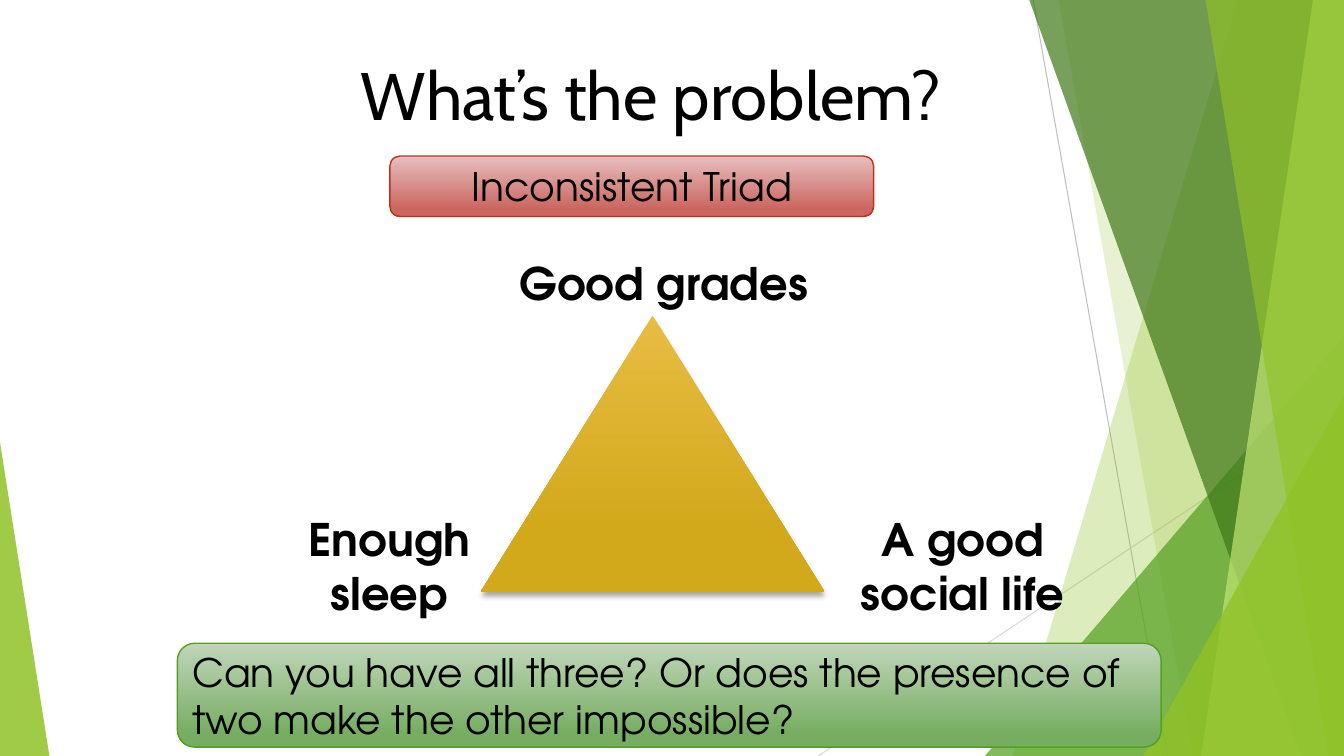
"""Build the inconsistent triad slide with its green faceted backdrop."""
from dataclasses import dataclass
from typing import Any

from lxml.etree import SubElement
from pptx import Presentation
from pptx.dml.color import RGBColor
from pptx.enum.shapes import MSO_CONNECTOR, MSO_SHAPE
from pptx.enum.text import MSO_ANCHOR, MSO_AUTO_SIZE, PP_ALIGN
from pptx.oxml.ns import qn
from pptx.util import Pt

WIDTH, HEIGHT = 960, 540
Box = tuple[float, float, float, float]


@dataclass(frozen=True)
class Theme:
    head: str = "Cabin"
    body: str = "TeX Gyre Adventor"
    ink: str = "000000"
    lime: str = "90C226"
    green: str = "54A021"
    moss: str = "3F7819"
    pale: str = "C0E474"
    red: str = "C42F1A"
    rays: tuple[str, str] = ("BFBFBF", "D9D9D9")
    rose: tuple[str, str] = ("E6BFBE", "CB6560")
    sage: tuple[str, str] = ("C0D6B9", "76AD61")
    gold: tuple[str, str] = ("E7BC43", "D2A91B")
    title: int = 48
    label: int = 32
    note: int = 28


@dataclass(frozen=True)
class Ray:
    start: tuple[float, float]
    end: tuple[float, float]
    color: str


@dataclass(frozen=True)
class Wedge:
    top: float
    foot: float
    color: str
    alpha: int


@dataclass(frozen=True)
class Corner:
    box: Box
    apex: int
    color: str
    alpha: int


@dataclass(frozen=True)
class Banner:
    box: Box
    text: str
    fade: tuple[str, str]
    edge: str
    align: PP_ALIGN


@dataclass(frozen=True)
class Label:
    box: Box
    text: str


THEME = Theme()
RAYS = (
    Ray((738, 0), (834, HEIGHT), THEME.rays[0]),
    Ray((WIDTH, 290), (584.5, HEIGHT), THEME.rays[1]),
)
FACETS = (
    Wedge(884.2, 723, THEME.lime, 30),
    Wedge(756, 852, THEME.lime, 20),
    Corner((703.5, 240, 256.5, 300), 1, THEME.green, 72),
    Wedge(735, 929.5, THEME.moss, 70),
    Wedge(938, 858, THEME.pale, 70),
    Wedge(861, 949, THEME.lime, 65),
    Corner((816.5, 283, 143.5, 257), 1, THEME.lime, 80),
    Corner((0, 316, 35.3, 224), 0, THEME.lime, 85),
)
BANNERS = (
    Banner((278.5, 111.5, 345.6, 43.2), "Inconsistent Triad",
           THEME.rose, THEME.red, PP_ALIGN.CENTER),
    Banner((126.7, 459.5, 702.7, 74.2),
           "Can you have all three? Or does the presence of two make the other impossible?",
           THEME.sage, THEME.green, PP_ALIGN.LEFT),
)
LABELS = (
    Label((353.5, 179.3, 241.2, 46), "Good grades"),
    Label((181.4, 362.2, 193.7, 85), "Enough sleep"),
    Label((572.4, 362.2, 230.4, 85), "A good social life"),
)


def rgb(code: str) -> RGBColor:
    return RGBColor.from_string(code)


def apply(target: Any, values: dict[str, Any]) -> None:
    for name, value in values.items():
        setattr(target, name, value)


def place(box: Box) -> list[Pt]:
    return [Pt(value) for value in box]


def write(shape: Any, text: str, face: str, size: int, align: PP_ALIGN,
          anchor: MSO_ANCHOR, bold: bool = False) -> None:
    frame = shape.text_frame
    apply(frame, {"text": text, "word_wrap": True, "vertical_anchor": anchor})
    line = frame.paragraphs[0]
    line.alignment = align
    font = line.runs[0].font
    apply(font, {"name": face, "size": Pt(size), "bold": bold})
    font.color.rgb = rgb(THEME.ink)


def tint(shape: Any, color: str, alpha: int) -> None:
    shape.shadow.inherit = False
    shape.fill.solid()
    shape.fill.fore_color.rgb = rgb(color)
    shape.line.fill.background()
    node = shape.element.find(".//" + qn("a:srgbClr"))
    SubElement(node, qn("a:alpha"), val=str(alpha * 1000))


def fade(shape: Any, colors: tuple[str, str], end: float) -> None:
    shape.shadow.inherit = False
    shape.fill.gradient()
    shape.fill.gradient_angle = 270
    for stop, color, spot in zip(shape.fill.gradient_stops, colors, (0, end)):
        stop.color.rgb = rgb(color)
        stop.position = spot


def draw_ray(slide: Any, ray: Ray) -> None:
    line = slide.shapes.add_connector(
        MSO_CONNECTOR.STRAIGHT, *place(ray.start + ray.end))
    line.line.width = Pt(0.75)
    line.line.color.rgb = rgb(ray.color)
    SubElement(line.element.spPr, qn("a:effectLst"))


def draw_facet(slide: Any, facet: Wedge | Corner) -> None:
    if isinstance(facet, Wedge):
        path = slide.shapes.build_freeform(Pt(facet.top), Pt(-0.7))
        path.add_line_segments([
            (Pt(WIDTH), Pt(-0.7)), (Pt(WIDTH), Pt(HEIGHT)),
            (Pt(facet.foot), Pt(HEIGHT))])
        shape = path.convert_to_shape()
    else:
        shape = slide.shapes.add_shape(
            MSO_SHAPE.ISOSCELES_TRIANGLE, *place(facet.box))
        shape.adjustments[0] = facet.apex
    tint(shape, facet.color, facet.alpha)


def draw_banner(slide: Any, item: Banner) -> None:
    shape = slide.shapes.add_shape(
        MSO_SHAPE.ROUNDED_RECTANGLE, *place(item.box))
    fade(shape, item.fade, 0.88)
    shape.line.width = Pt(1)
    shape.line.color.rgb = rgb(item.edge)
    write(shape, item.text, THEME.body, THEME.note, item.align, MSO_ANCHOR.MIDDLE)


def draw_triad(slide: Any) -> None:
    shape = slide.shapes.add_shape(
        MSO_SHAPE.ISOSCELES_TRIANGLE, *place((343.4, 225.4, 245.5, 197.3)))
    fade(shape, THEME.gold, 0.78)
    shape.line.fill.background()
    glow = SubElement(
        shape.element.spPr.find(qn("a:effectLst")), qn("a:outerShdw"),
        blurRad=str(Pt(4)), dist=str(Pt(3)), dir="5400000", rotWithShape="0")
    color = SubElement(glow, qn("a:srgbClr"), val=THEME.ink)
    SubElement(color, qn("a:alpha"), val="35000")


def draw_label(slide: Any, item: Label) -> None:
    shape = slide.shapes.add_textbox(*place(item.box))
    write(shape, item.text, THEME.body, THEME.label, PP_ALIGN.CENTER,
          MSO_ANCHOR.TOP, True)
    shape.text_frame.auto_size = MSO_AUTO_SIZE.SHAPE_TO_FIT_TEXT


def draw_title(slide: Any) -> None:
    title = slide.shapes.title
    box = place((126.7, 34.6, 676.8, 103.7))
    apply(title, dict(zip(("left", "top", "width", "height"), box)))
    write(title, "What’s the problem?", THEME.head, THEME.title,
          PP_ALIGN.CENTER, MSO_ANCHOR.TOP)
    title.element.getparent().append(title.element)


def main() -> None:
    deck = Presentation()
    apply(deck, {"slide_width": Pt(WIDTH), "slide_height": Pt(HEIGHT)})
    slide = deck.slides.add_slide(deck.slide_layouts[5])
    for ray in RAYS:
        draw_ray(slide, ray)
    for facet in FACETS:
        draw_facet(slide, facet)
    for item in BANNERS:
        draw_banner(slide, item)
    draw_triad(slide)
    for item in LABELS:
        draw_label(slide, item)
    draw_title(slide)
    deck.save("out.pptx")


if __name__ == "__main__":
    main()
